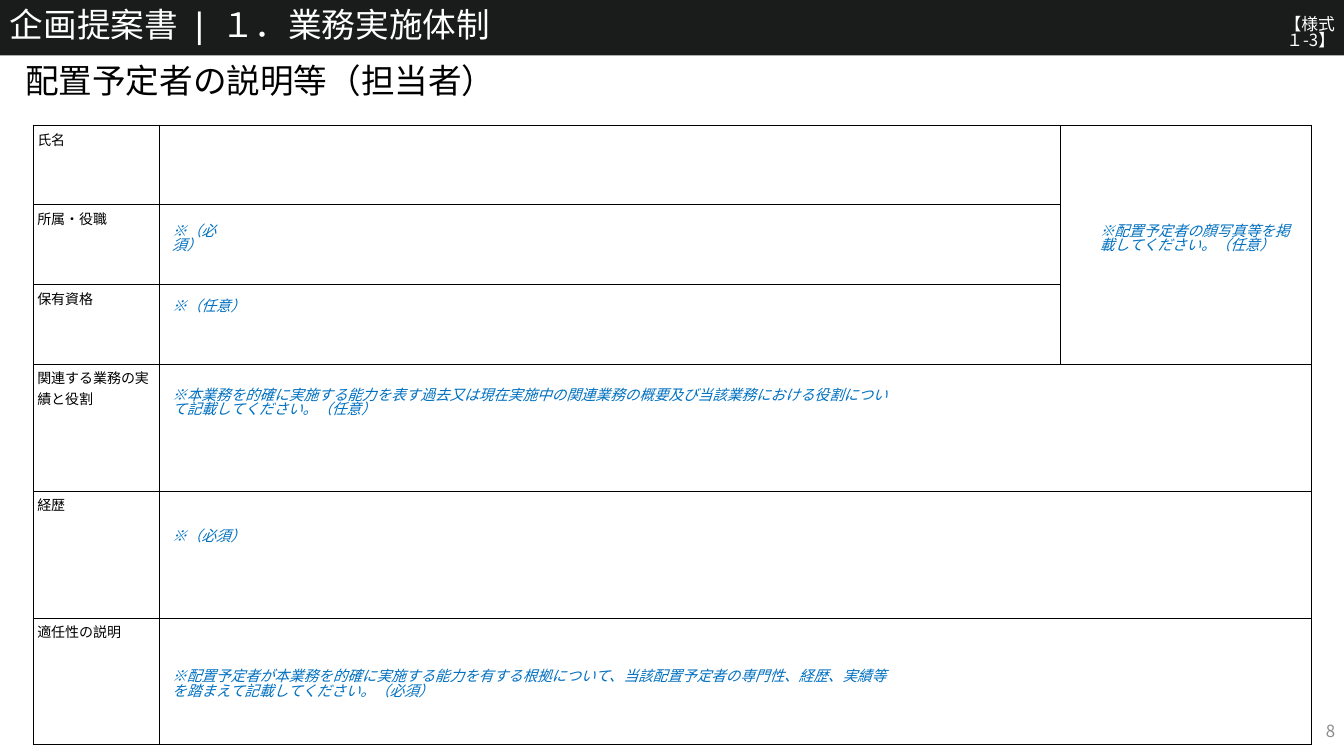
from pptx import Presentation
from pptx.dml.color import RGBColor
from pptx.enum.shapes import MSO_SHAPE
from pptx.enum.text import MSO_ANCHOR, PP_ALIGN
from pptx.oxml import parse_xml
from pptx.oxml.ns import nsdecls
from pptx.util import Inches, Pt

FONT = "Noto Sans CJK JP"
BLACK = RGBColor(0x00, 0x00, 0x00)
WHITE = RGBColor(0xFF, 0xFF, 0xFF)
BANNER = RGBColor(0x1A, 0x1C, 0x1C)
NOTE_BLUE = RGBColor(0x00, 0x70, 0xC0)
PAGE_GRAY = RGBColor(0x8C, 0x8C, 0x8C)

LINE_SPACING = 0.82
COLUMN_WIDTHS = (1.25, 8.94, 2.49)
ROWS = (
    ("氏名", 0.79),
    ("所属・役職", 0.79),
    ("保有資格", 0.79),
    ("関連する業務の実績と役割", 1.26),
    ("経歴", 1.26),
    ("適任性の説明", 1.26),
)
PHOTO_ROWS = 3
NOTES = (
    ("※本業務を的確に実施する能力を表す過去又は現在実施中の関連業務の概要及び"
     "当該業務における役割について記載してください。（任意）", 1.61, 3.81, 7.37, 0.45),
    ("※配置予定者が本業務を的確に実施する能力を有する根拠について、当該配置予定者の"
     "専門性、経歴、実績等を踏まえて記載してください。（必須）", 1.61, 6.6, 7.37, 0.45),
    ("※（必須）", 1.61, 5.21, 7.37, 0.28),
    ("※（任意）", 1.61, 2.93, 7.37, 0.28),
    ("※（必須）", 1.61, 2.18, 0.82, 0.28),
    ("※配置予定者の顔写真等を掲載してください。（任意）", 10.81, 2.18, 2.1, 0.45),
)


def write_text(frame, text, size, color, italic=False, align=PP_ALIGN.LEFT):
    frame.word_wrap = True
    paragraph = frame.paragraphs[0]
    paragraph.alignment = align
    run = paragraph.add_run()
    run.text = text
    font = run.font
    font.size, font.name, font.italic = Pt(size), FONT, italic
    font.color.rgb = color
    # The Latin typeface alone does not cover Japanese characters.
    run.font._element.append(parse_xml(f'<a:ea {nsdecls("a")} typeface="{FONT}"/>'))
    return paragraph


def add_text(slide, text, left, top, width, height, size, color,
             italic=False, align=PP_ALIGN.LEFT, anchor=MSO_ANCHOR.TOP):
    box = slide.shapes.add_textbox(Inches(left), Inches(top), Inches(width), Inches(height))
    box.text_frame.vertical_anchor = anchor
    paragraph = write_text(box.text_frame, text, size, color, italic, align)
    paragraph.line_spacing = LINE_SPACING


def add_banner(slide, text):
    banner = slide.shapes.add_shape(
        MSO_SHAPE.RECTANGLE, 0, 0, Inches(13.33), Inches(0.55))
    banner.shadow.inherit = False
    banner.fill.solid()
    banner.fill.fore_color.rgb = BANNER
    banner.line.fill.background()
    banner.text_frame.vertical_anchor = MSO_ANCHOR.MIDDLE
    paragraph = write_text(banner.text_frame, text, 24, WHITE)
    paragraph.line_spacing = LINE_SPACING


def style_cell(cell):
    """Give the cell thin black borders and a white fill."""
    properties = cell._tc.get_or_add_tcPr()
    for side in ("lnL", "lnR", "lnT", "lnB"):
        properties.append(parse_xml(
            f'<a:{side} {nsdecls("a")} w="{Pt(0.5)}"><a:solidFill>'
            f'<a:srgbClr val="{BLACK}"/></a:solidFill></a:{side}>'))
    cell.fill.solid()
    cell.fill.fore_color.rgb = WHITE


def add_profile_table(slide):
    heights = [height for _, height in ROWS]
    table = slide.shapes.add_table(
        len(ROWS), len(COLUMN_WIDTHS), Inches(0.33), Inches(1.24),
        Inches(sum(COLUMN_WIDTHS)), Inches(sum(heights))).table
    table.first_row = table.horz_banding = False
    for column, width in zip(table.columns, COLUMN_WIDTHS):
        column.width = Inches(width)
    for row, height in zip(table.rows, heights):
        row.height = Inches(height)
    for cell in table.iter_cells():
        style_cell(cell)
    for index, (label, _) in enumerate(ROWS):
        cell = table.cell(index, 0)
        cell.margin_left = cell.margin_right = Inches(0.04)
        cell.margin_top = cell.margin_bottom = Inches(0.04)
        write_text(cell.text_frame, label, 10, BLACK)
        if index >= PHOTO_ROWS:
            table.cell(index, 1).merge(table.cell(index, 2))
    table.cell(0, 2).merge(table.cell(PHOTO_ROWS - 1, 2))


def main():
    presentation = Presentation()
    presentation.slide_width = Inches(13.33)
    presentation.slide_height = Inches(7.5)
    slide = presentation.slides.add_slide(presentation.slide_layouts[6])

    add_text(slide, "8", 10.9, 7.07, 2.44, 0.4, 12, PAGE_GRAY,
             align=PP_ALIGN.RIGHT, anchor=MSO_ANCHOR.MIDDLE)
    add_banner(slide, "企画提案書 ❘ １．業務実施体制")
    add_text(slide, "【様式１-3】", 12.28, 0.12, 1.06, 0.3, 12, WHITE, align=PP_ALIGN.RIGHT)
    add_profile_table(slide)
    for text, left, top, width, height in NOTES:
        add_text(slide, text, left, top, width, height, 10.5, NOTE_BLUE, italic=True)
    add_text(slide, "配置予定者の説明等（担当者）", 0.15, 0.62, 11.81, 0.5, 24, BLACK)
    presentation.save("out.pptx")


if __name__ == "__main__":
    main()
